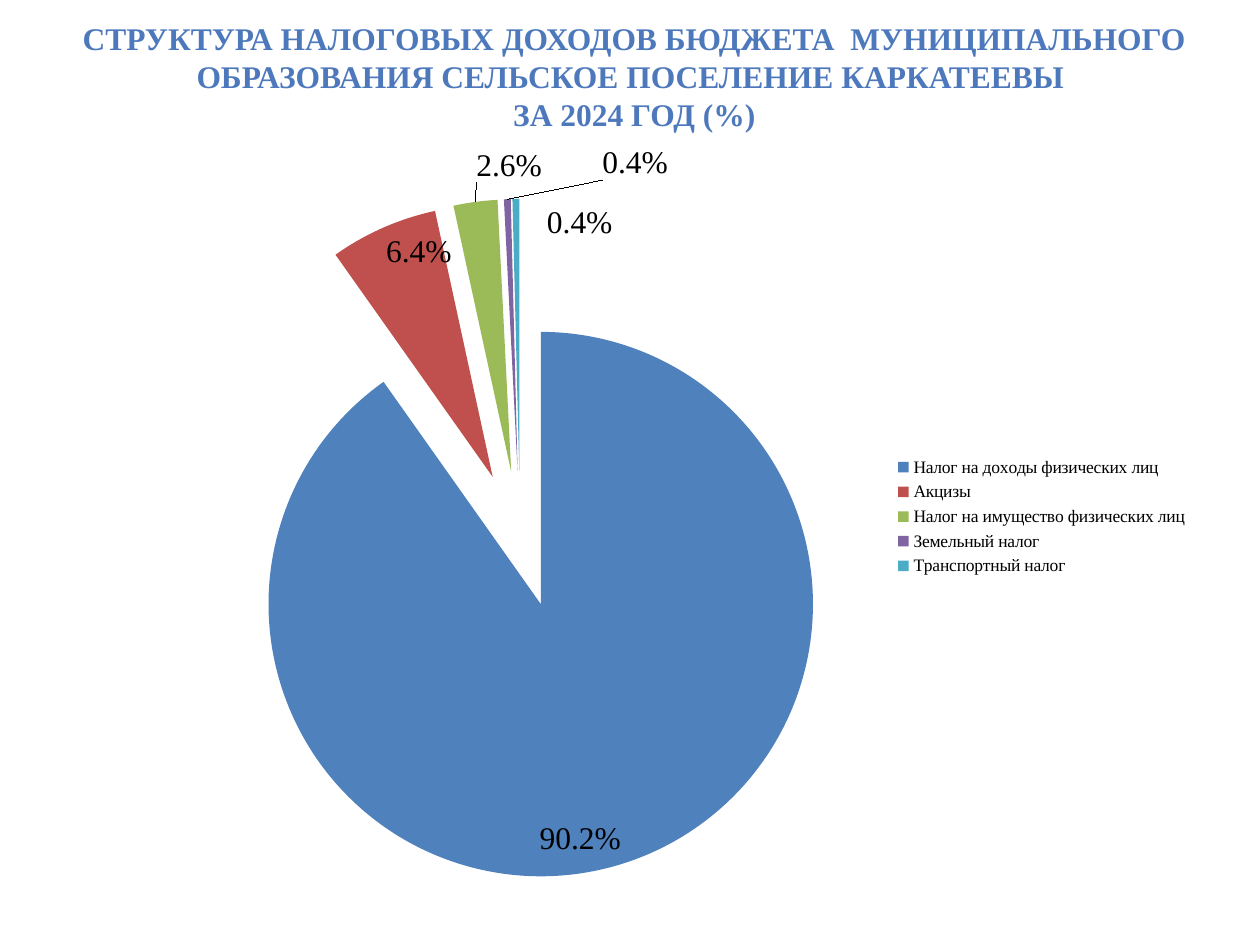
from dataclasses import dataclass

from lxml import etree
from pptx import Presentation
from pptx import util as u
from pptx.chart.data import CategoryChartData
from pptx.dml.color import RGBColor
from pptx.enum import chart as ch, text
from pptx.oxml import parse_xml
from pptx.oxml.ns import nsdecls, qn


@dataclass(frozen=True)
class Theme:
    font: str = "Times New Roman"
    title_size: int = 18
    label_size: int = 18
    legend_size: int = 10
    ink: str = "000000"
    slices: tuple = ("4F81BD", "C0504D", "9BBB59", "8064A2", "4BACC6")
    title_stops: tuple = ((0, "7494C9"), (49, "4D79BC"), (50, "346AAA"),
                          (92, "325F94"), (100, "315D91"))


class SlideBuilder:
    def __init__(self, slide, theme):
        self.slide = slide
        self.theme = theme

    def style(self, font, size):
        font.name = self.theme.font
        font.size = u.Pt(size)

    def gradient(self, fill):
        """Fill from top to bottom with the title colours."""
        fill.gradient()
        fill.gradient_angle = 270
        stops = fill._fill._gradFill.find(qn("a:gsLst"))
        for stop in list(stops):
            stops.remove(stop)
        for percent, color in self.theme.title_stops:
            stop = etree.SubElement(stops, qn("a:gs"), pos=str(percent * 1000))
            etree.SubElement(stop, qn("a:srgbClr"), val=color)

    def title(self, wording, left, top, width, height):
        title = self.slide.shapes.title
        title.left, title.top = u.Inches(left), u.Inches(top)
        title.width, title.height = u.Inches(width), u.Inches(height)
        frame = title.text_frame
        frame.text = wording
        frame.word_wrap = True
        frame.auto_size = text.MSO_AUTO_SIZE.NONE
        frame.vertical_anchor = text.MSO_ANCHOR.MIDDLE
        frame.margin_left = frame.margin_right = u.Inches(0.11)
        frame.margin_top = frame.margin_bottom = u.Inches(0.06)
        heading = frame.paragraphs[0]
        heading.alignment = text.PP_ALIGN.CENTER
        self.style(heading.font, self.theme.title_size)
        heading.font.bold = True
        self.gradient(heading.font.fill)

    def layout(self, **parts):
        """Return a manual chart layout, in fractions of the chart."""
        values = "".join(f'<c:{k} val="{v}"/>' for k, v in parts.items())
        return parse_xml(f'<c:layout {nsdecls("c")}><c:manualLayout>{values}'
                         "</c:manualLayout></c:layout>")

    def exploded_pie(self, shares, label_shifts, left, top, width, height):
        data = CategoryChartData(number_format="0.0%")
        data.categories = list(shares)
        data.add_series("Series 1", list(shares.values()))
        chart = self.slide.shapes.add_chart(
            ch.XL_CHART_TYPE.PIE, u.Inches(left), u.Inches(top),
            u.Inches(width), u.Inches(height), data).chart
        self.style(chart.font, self.theme.legend_size)
        chart.font.color.rgb = RGBColor.from_string(self.theme.ink)
        chart.has_title = False
        chart.has_legend = True
        chart.legend.position = ch.XL_LEGEND_POSITION.RIGHT
        chart.legend.include_in_layout = False

        plot = chart.plots[0]
        plot.vary_by_categories = True
        area = chart._chartSpace.chart.plotArea
        for old in area.findall(qn("c:layout")):
            area.remove(old)
        area.insert(0, self.layout(layoutTarget="inner", xMode="edge", yMode="edge",
                                   x=0.04, y=0.08, w=0.64, h=0.9))

        series = plot.series[0]
        for index, color in enumerate(self.theme.slices):
            fill = series.points[index].format.fill
            fill.solid()
            fill.fore_color.rgb = RGBColor.from_string(color)
        explosion = parse_xml(f'<c:explosion {nsdecls("c")} val="25"/>')
        series._element.find(qn("c:dPt")).addprevious(explosion)
        self.pie_labels(series, label_shifts)

    def pie_labels(self, series, shifts):
        """Label every slice; shifts move single labels, in fractions of the chart."""
        labels = series.data_labels
        labels.show_value = True
        labels.number_format = "0.0%"
        labels.number_format_is_linked = False
        labels.position = ch.XL_LABEL_POSITION.INSIDE_END
        self.style(labels.font, self.theme.label_size)
        leader = labels._element.find(qn("c:showLeaderLines"))
        if leader is None:
            leader = etree.SubElement(labels._element, qn("c:showLeaderLines"))
        leader.set("val", "1")
        for index, (x, y) in shifts.items():
            label = series.points[index].data_label
            self.style(label.font, self.theme.label_size)
            label.position = ch.XL_LABEL_POSITION.INSIDE_END
            newest = labels._element.findall(qn("c:dLbl"))[-1]
            newest.find(qn("c:idx")).addnext(self.layout(x=x, y=y))


def main():
    deck = Presentation()
    deck.slide_width, deck.slide_height = u.Inches(10), u.Inches(7.5)
    builder = SlideBuilder(deck.slides.add_slide(deck.slide_layouts[5]), Theme())
    builder.title("СТРУКТУРА НАЛОГОВЫХ ДОХОДОВ БЮДЖЕТА  МУНИЦИПАЛЬНОГО "
                  "ОБРАЗОВАНИЯ СЕЛЬСКОЕ ПОСЕЛЕНИЕ КАРКАТЕЕВЫ \v"
                  "ЗА 2024 ГОД (%)", 0.35, 0.13, 9.37, 0.94)
    tax_shares = {
        "Налог на доходы физических лиц": 0.902,
        "Акцизы": 0.064,
        "Налог на имущество физических лиц": 0.026,
        "Земельный налог": 0.004,
        "Транспортный налог": 0.004,
    }
    small_tax_shifts = {2: (0, -0.08), 3: (0.12, -0.08), 4: (0.06, 0)}
    builder.exploded_pie(tax_shares, small_tax_shifts, 1.09, 1.09, 8.44, 6.02)
    deck.save("out.pptx")


if __name__ == "__main__":
    main()
